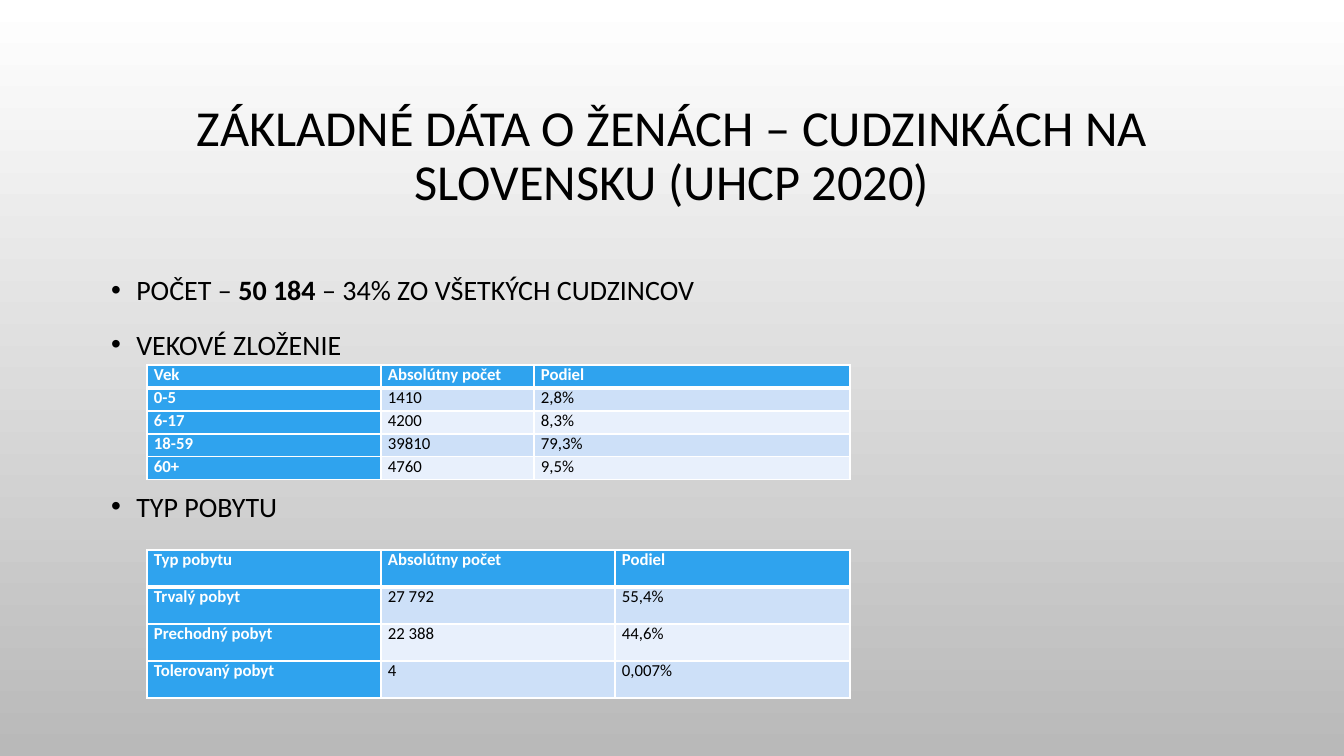
import pptx
import pptx.dml.color
import pptx.enum.text
import pptx.oxml
import pptx.oxml.ns
import pptx.util

# Content
TITLE = "ZÁKLADNÉ DÁTA O ŽENÁCH – CUDZINKÁCH NA SLOVENSKU (UHCP 2020)"
# Each bullet: space before in points, then runs as (text, bold)
BULLETS = [
    (0, [("POČET – ", False), ("50 184 ", True), ("– 34% ZO VŠETKÝCH CUDZINCOV", False)]),
    (10, [("VEKOVÉ ZLOŽENIE", False)]),
    (87, [("TYP POBYTU", False)]),
]
TABLES = [
    {
        "top": 365, "row_height": 23, "columns": [234, 153, 316],
        "rows": [
            ("Vek", "Absolútny počet", "Podiel"),
            ("0-5", "1410", "2,8%"),
            ("6-17", "4200", "8,3%"),
            ("18-59", "39810", "79,3%"),
            ("60+", "4760", "9,5%"),
        ],
    },
    {
        "top": 550, "row_height": 37, "columns": [234, 234, 235],
        "rows": [
            ("Typ pobytu", "Absolútny počet", "Podiel"),
            ("Trvalý pobyt", "27 792", "55,4%"),
            ("Prechodný pobyt", "22 388", "44,6%"),
            ("Tolerovaný pobyt", "4", "0,007%"),
        ],
    },
]
COLORS = {
    "text": "000000", "white": "FFFFFF", "header": "2FA3EE",
    "band_dark": "CDE0F8", "band_light": "E8F0FC", "background_end": "B9B9B9",
}
FONT = "Calibri"
TABLE_LEFT = 147
NAMESPACE = pptx.oxml.ns.nsdecls("a")


def px(length):
    return pptx.util.Emu(round(length * 914400 / 100.8))


def rgb(name):
    return pptx.dml.color.RGBColor.from_string(COLORS[name])


def format_font(font, size, color, bold=False):
    font.name = FONT
    font.size = pptx.util.Pt(size)
    font.bold = bold
    font.color.rgb = rgb(color)


def place(shape, left, top, width, height):
    shape.left, shape.top = px(left), px(top)
    shape.width, shape.height = px(width), px(height)


def add_bullet(paragraph):
    properties = paragraph._p.get_or_add_pPr()
    properties.set("marL", "228600")
    properties.set("indent", "-228600")
    for xml in (
        f'<a:buClr {NAMESPACE}><a:srgbClr val="{COLORS["text"]}"/></a:buClr>',
        f'<a:buFont {NAMESPACE} typeface="Arial"/>',
        f'<a:buChar {NAMESPACE} char="•"/>',
    ):
        properties.append(pptx.oxml.parse_xml(xml))


def add_borders(cell, row):
    widths = {"L": 1, "R": 1, "T": 3 if row == 1 else 1, "B": 3 if row == 0 else 1}
    properties = cell._tc.get_or_add_tcPr()
    for side, width in widths.items():
        properties.append(pptx.oxml.parse_xml(
            f'<a:ln{side} {NAMESPACE} w="{pptx.util.Pt(width)}"><a:solidFill>'
            f'<a:srgbClr val="{COLORS["white"]}"/></a:solidFill></a:ln{side}>'))


def add_data_table(slide, data):
    rows, columns = data["rows"], data["columns"]
    table = slide.shapes.add_table(
        len(rows), len(columns), px(TABLE_LEFT), px(data["top"]),
        px(sum(columns)), px(data["row_height"] * len(rows))).table
    for column, width in zip(table.columns, columns):
        column.width = px(width)
    for row_index, values in enumerate(rows):
        table.rows[row_index].height = px(data["row_height"])
        for column_index, value in enumerate(values):
            cell = table.cell(row_index, column_index)
            is_heading = row_index == 0 or column_index == 0
            band = "band_dark" if row_index % 2 else "band_light"
            add_borders(cell, row_index)
            cell.fill.solid()
            cell.fill.fore_color.rgb = rgb("header" if is_heading else band)
            cell.margin_left = cell.margin_right = px(7)
            cell.margin_top = cell.margin_bottom = 0
            cell.text_frame.text = value
            format_font(cell.text_frame.paragraphs[0].runs[0].font, 12,
                        "white" if is_heading else "text", is_heading)


def main():
    presentation = pptx.Presentation()
    presentation.slide_width, presentation.slide_height = px(1344), px(756)
    slide = presentation.slides.add_slide(presentation.slide_layouts[1])

    # Background gradient, top to bottom
    background = slide.background.fill
    background.gradient()
    background.gradient_angle = 270
    for stop, position, color in zip(
            background.gradient_stops, (0, 1), ("white", "background_end")):
        stop.position = position
        stop.color.rgb = rgb(color)

    # Title
    title = slide.shapes.title
    place(title, 101, 69, 1142, 176)
    title.text_frame.text = TITLE
    title.text_frame.auto_size = pptx.enum.text.MSO_AUTO_SIZE.NONE
    title.text_frame.vertical_anchor = pptx.enum.text.MSO_ANCHOR.MIDDLE
    heading = title.text_frame.paragraphs[0]
    heading.alignment = pptx.enum.text.PP_ALIGN.CENTER
    heading.line_spacing = 0.9
    format_font(heading.runs[0].font, 36, "text")

    # Bullets, with room left for the first table
    body = slide.placeholders[1]
    place(body, 101, 261, 1142, 459)
    frame = body.text_frame
    frame.auto_size = pptx.enum.text.MSO_AUTO_SIZE.NONE
    for index, (space_before, runs) in enumerate(BULLETS):
        paragraph = frame.add_paragraph() if index else frame.paragraphs[0]
        add_bullet(paragraph)
        paragraph.line_spacing = 1.2
        paragraph.space_before = pptx.util.Pt(space_before)
        for text, bold in runs:
            run = paragraph.add_run()
            run.text = text
            format_font(run.font, 20, "text", bold)

    # Tables
    for data in TABLES:
        add_data_table(slide, data)

    presentation.save("out.pptx")


if __name__ == "__main__":
    main()
